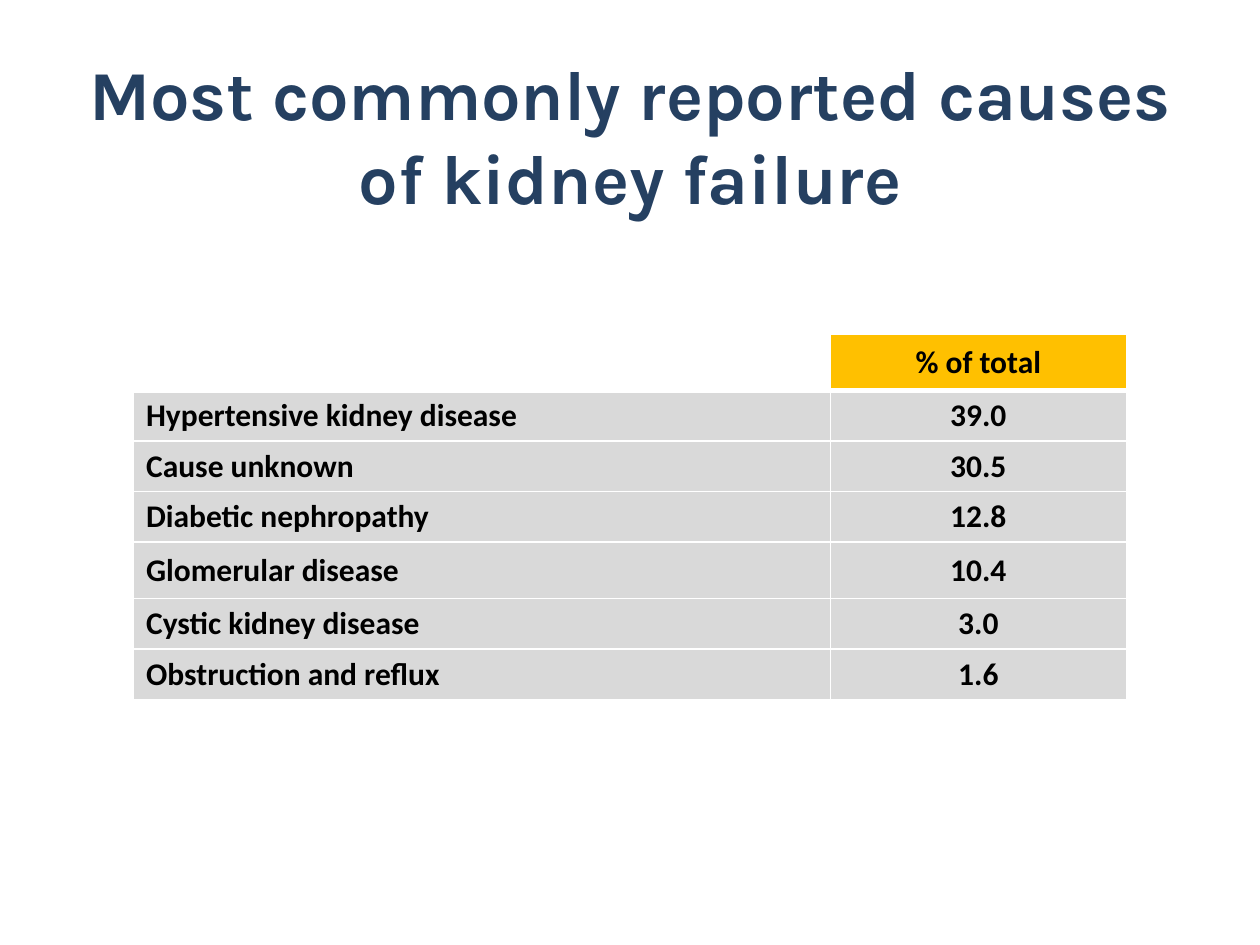
from lxml.etree import SubElement
from pptx import Presentation
from pptx.dml.color import RGBColor
from pptx.enum.text import MSO_ANCHOR, PP_ALIGN
from pptx.oxml.ns import qn
from pptx.util import Inches, Pt

NAVY = RGBColor(0x25, 0x40, 0x61)
AMBER = RGBColor(0xFF, 0xC0, 0x00)
GREY = RGBColor(0xD9, 0xD9, 0xD9)
BLACK = RGBColor(0, 0, 0)
WHITE = RGBColor(0xFF, 0xFF, 0xFF)

CAUSES = [
    ("", "% of total"),
    ("Hypertensive kidney disease", "39.0"),
    ("Cause unknown", "30.5"),
    ("Diabetic nephropathy", "12.8"),
    ("Glomerular disease", "10.4"),
    ("Cystic kidney disease", "3.0"),
    ("Obstruction and reflux", "1.6"),
]
COLUMN_WIDTHS = [5.53, 2.35]
ROW_HEIGHT, TALL_ROW_HEIGHT = 0.4, 0.45
TALL_ROWS = (0, 4)


def write(frame, text, font_name, size, color, align):
    frame.text = text
    frame.word_wrap = True
    para = frame.paragraphs[0]
    para.alignment = align
    for span in para.runs:
        span.font.name = font_name
        span.font.size = Pt(size)
        span.font.bold = True
        span.font.color.rgb = color


def set_border(cell, side, points):
    line = SubElement(cell._tc.get_or_add_tcPr(), qn("a:ln" + side), w=str(Pt(points)))
    fill = SubElement(line, qn("a:solidFill"))
    SubElement(fill, qn("a:srgbClr"), val=str(WHITE))


def add_title(page, left, top, width, height):
    box = page.shapes.add_textbox(left, top, width, height)
    box.text_frame.vertical_anchor = MSO_ANCHOR.MIDDLE
    write(box.text_frame, "Most commonly reported causes of kidney failure",
          "Karla", 40, NAVY, PP_ALIGN.CENTER)


def add_causes_table(page, left, top, width, height):
    table = page.shapes.add_table(len(CAUSES), 2, left, top, width, height).table
    for column, column_width in zip(table.columns, COLUMN_WIDTHS):
        column.width = Inches(column_width)

    for row_index, texts in enumerate(CAUSES):
        tall = row_index in TALL_ROWS
        table.rows[row_index].height = Inches(TALL_ROW_HEIGHT if tall else ROW_HEIGHT)
        for column_index, text in enumerate(texts):
            cell = table.cell(row_index, column_index)
            cell.vertical_anchor = MSO_ANCHOR.MIDDLE
            align = PP_ALIGN.CENTER if column_index else PP_ALIGN.LEFT
            write(cell.text_frame, text, "Calibri", 18, BLACK, align)

            # White grid, heavier around the header's lower edge
            for side in "LRTB":
                heavy = (row_index, side) in ((0, "B"), (1, "T"))
                set_border(cell, side, 3 if heavy else 1)

            # The corner cell stays empty and unfilled
            if text:
                cell.fill.solid()
                cell.fill.fore_color.rgb = GREY if row_index else AMBER
            else:
                cell.fill.background()


def main():
    deck = Presentation()
    deck.slide_width, deck.slide_height = Inches(10), Inches(7.5)
    page = deck.slides.add_slide(deck.slide_layouts[6])
    add_title(page, Inches(0.59), Inches(0.44), Inches(8.82), Inches(1.25))
    add_causes_table(page, Inches(1.06), Inches(2.65), Inches(7.88), Inches(2.9))
    deck.save("out.pptx")


if __name__ == "__main__":
    main()
